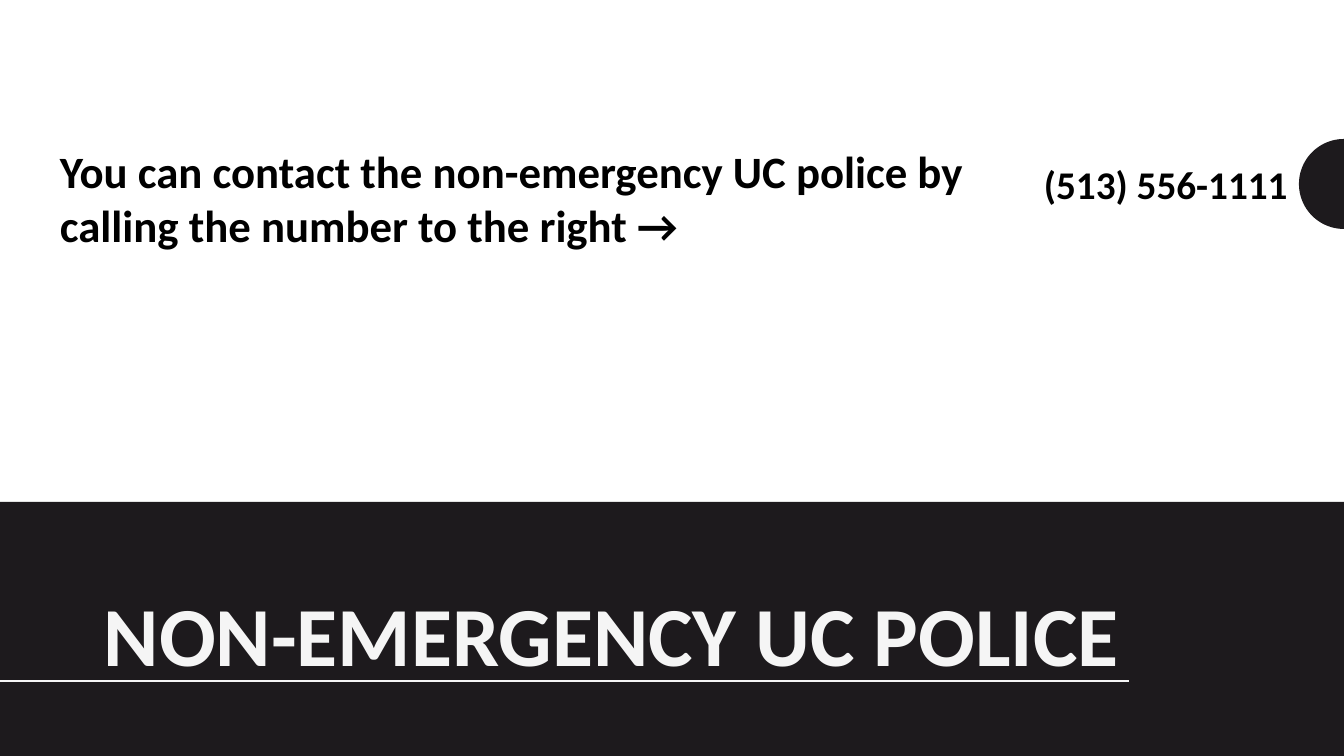
"""Build the non-emergency police contact slide."""
import math

import pptx
import pptx.dml.color
import pptx.enum.shapes
import pptx.enum.text
import pptx.oxml
import pptx.util

SIZE = (1344, 756)
BAND = (0, 502, 1344, 254)
HALF_DISC = {"center": (1344, 184), "radius": 45, "steps": 48}
RULE = (1129, 681, 0, 681)
TITLE = ("NON-EMERGENCY UC POLICE", (71, 592, 1058, 98))
PHONE = ("(513) 556-1111", (1034, 155, 360, 58))
CONTACT = (
    "You can contact the non-emergency UC police by calling the number to the right →",
    (50, 139, 953, 119),
)
THEME = {
    "font": "Calibri",
    "paper": "FFFFFF",
    "dark": "1D1A1D",
    "light": "F5F5F5",
    "ink": "000000",
    "title": 60,
    "contact": 32,
    "phone": 28,
    "rule": 2,
}
EMU_PER_PX = 914400 / 100.8


def px(*lengths):
    return [pptx.util.Emu(round(length * EMU_PER_PX)) for length in lengths]


def color(name):
    return pptx.dml.color.RGBColor.from_string(THEME[name])


def paint(shape, name):
    shape.shadow.inherit = False
    shape.fill.solid()
    shape.fill.fore_color.rgb = color(name)
    shape.line.fill.background()


def add_half_disc(page, center, radius, steps):
    points = []
    for step in range(steps + 1):
        angle = math.pi * step / steps
        points.append(px(center[0] - radius * math.sin(angle),
                         center[1] - radius * math.cos(angle)))
    builder = page.shapes.build_freeform(*points[0])
    builder.add_line_segments(points[1:], close=True)
    paint(builder.convert_to_shape(), "dark")


def add_rule(page, ends):
    line = page.shapes.add_connector(
        pptx.enum.shapes.MSO_CONNECTOR.STRAIGHT, *px(*ends))
    line.line.color.rgb = color("light")
    line.line.width = pptx.util.Pt(THEME["rule"])
    line._element.spPr.append(pptx.oxml.parse_xml(
        '<a:effectLst xmlns:a="http://schemas.openxmlformats.org/drawingml/2006/main"/>'))


def add_text(page, text, place, *, size, ink="ink", align="LEFT", anchor="TOP",
             spacing=1.0):
    box = page.shapes.add_textbox(*px(*place))
    frame = box.text_frame
    frame.word_wrap = True
    frame.vertical_anchor = pptx.enum.text.MSO_ANCHOR[anchor]
    para = frame.paragraphs[0]
    para.alignment = pptx.enum.text.PP_ALIGN[align]
    para.line_spacing = spacing
    span = para.add_run()
    span.text = text
    span.font.name = THEME["font"]
    span.font.size = pptx.util.Pt(THEME[size])
    span.font.bold = True
    span.font.color.rgb = color(ink)


def main():
    deck = pptx.Presentation()
    deck.slide_width, deck.slide_height = px(*SIZE)
    page = deck.slides.add_slide(deck.slide_layouts[6])
    page.background.fill.solid()
    page.background.fill.fore_color.rgb = color("paper")
    add_half_disc(page, **HALF_DISC)
    band = page.shapes.add_shape(
        pptx.enum.shapes.MSO_SHAPE.RECTANGLE, *px(*BAND))
    paint(band, "dark")
    add_text(page, *TITLE, size="title", ink="light", align="RIGHT",
             anchor="MIDDLE", spacing=0.85)
    add_rule(page, RULE)
    add_text(page, *PHONE, size="phone")
    add_text(page, *CONTACT, size="contact")
    deck.save("out.pptx")


if __name__ == "__main__":
    main()
